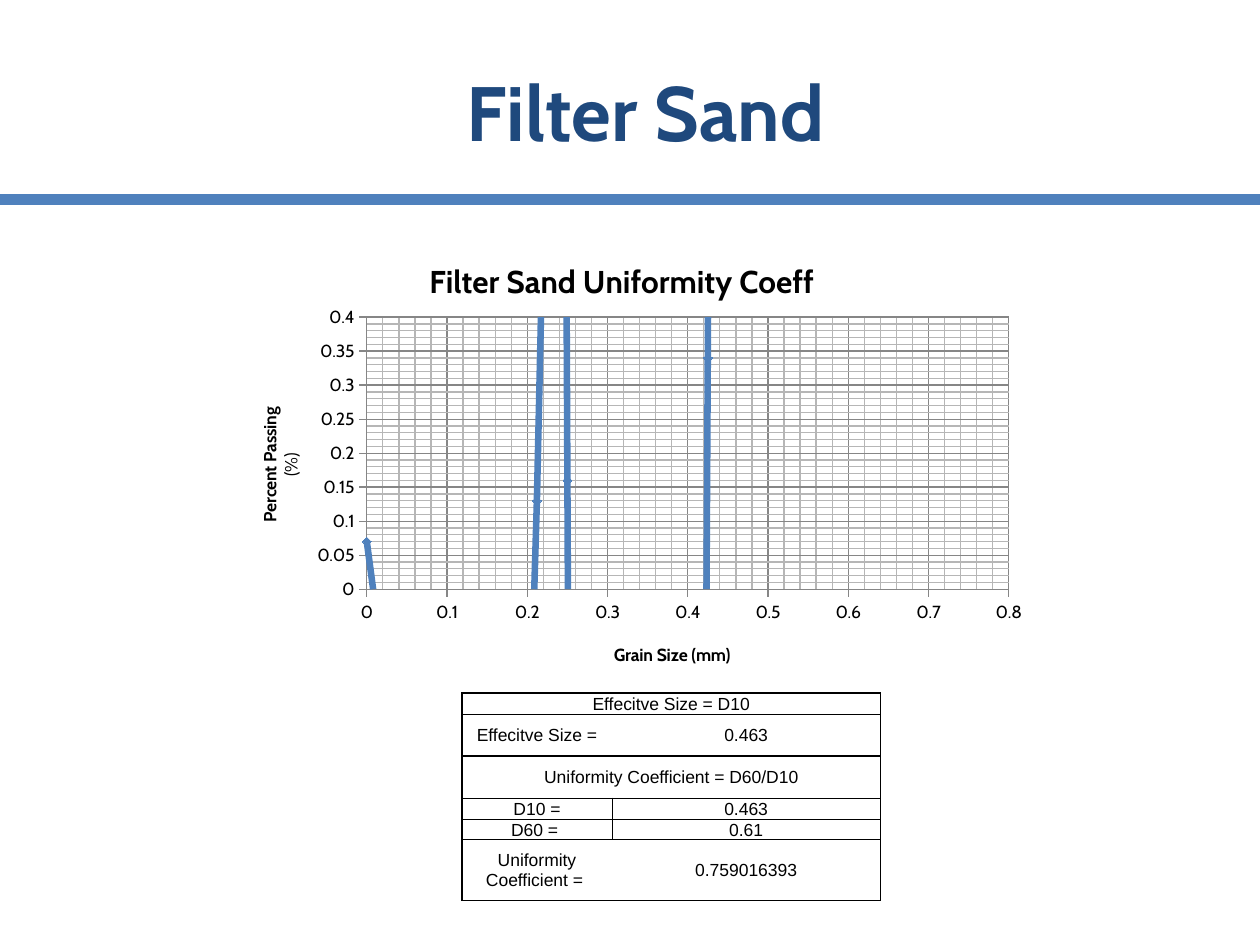
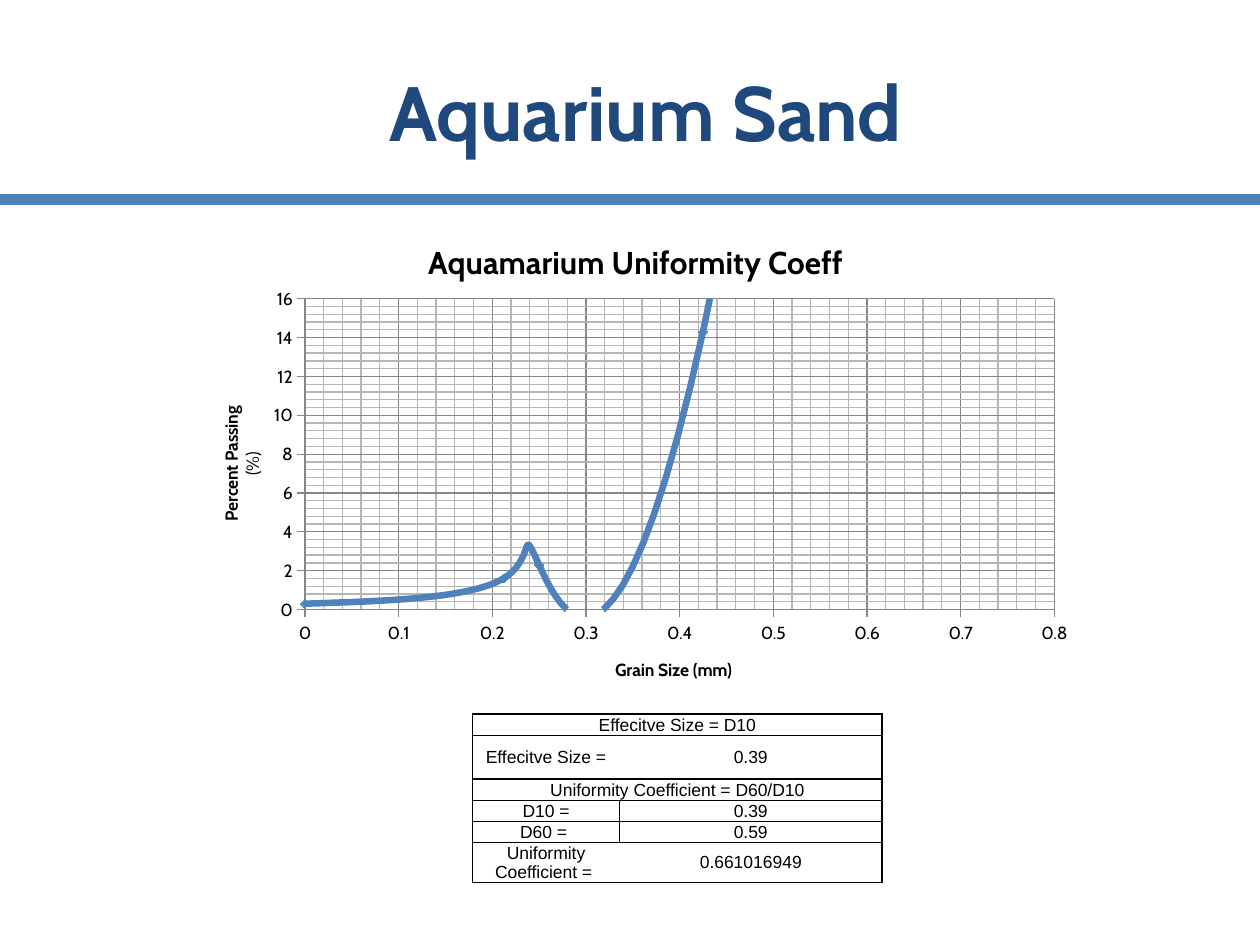
from dataclasses import dataclass
from lxml import etree
from pptx import Presentation
from pptx import util as u
from pptx.chart import data as chart_data
from pptx.dml import color
from pptx.enum import chart as charts, shapes, text
from pptx.oxml import ns


@dataclass(frozen=True)
class Theme:
    """Colours, fonts and type sizes shared by the slides."""
    navy: str = "1F497D"
    blue: str = "4F81BD"
    ink: str = "000000"
    grid: str = "868686"
    fine_grid: str = "B6B6B6"
    heading_font: str = "Cabin"
    table_font: str = "Arial"
    title_size: float = 44
    chart_title_size: float = 18
    body_size: float = 10


@dataclass(frozen=True)
class Box:
    """A region measured in grid columns and rows."""
    left: float
    top: float
    width: float
    height: float

    def place(self):
        """Return left, top, width and height as lengths."""
        return [cells(n) for n in (self.left, self.top, self.width, self.height)]


@dataclass(frozen=True)
class Sand:
    """The measurements and the regions of one sand slide."""
    title: str
    chart_title: str
    passing: tuple
    y_max: float
    y_step: float
    effective: str
    d60: str
    coefficient: str
    chart_box: Box
    plot_area: tuple
    title_spots: tuple
    table_box: Box
    label_width: float
    row_heights: tuple


THEME = Theme()
COLUMNS = 120
WIDTH, HEIGHT = u.Inches(10), u.Inches(7.5)
TITLE_BOX = Box(6, 3, 111, 15)
RULE_ROW = 19
SIEVES = (4.75, 2, 0.85, 0.425, 0.25, 0.212, 0)
SANDS = (
    Sand("Filter Sand", "Filter Sand Uniformity Coeff",
         (100, 100, 100, 0.34, 0.16, 0.13, 0.07), 0.4, 0.05,
         "0.463", "0.61", "0.759016393",
         Box(21, 22, 77.4, 43.2), (0.18, 0.19, 0.79, 0.6),
         ((0.25, 0.05), (0.48, 0.9), (0.04, 0.38)),
         Box(44, 66, 39.84, 19.75), 14.28, (2, 4, 4, 2, 2, 5.75)),
    Sand("Aquarium Sand", "Aquamarium Uniformity Coeff",
         (100, 100, 100, 14.3, 2.3, 1.6, 0.3), 16, 2,
         "0.39", "0.59", "0.661016949",
         Box(17, 20, 86, 47), (0.14, 0.18, 0.83, 0.63),
         ((0.27, 0.05), (0.48, 0.9), (0.04, 0.39)),
         Box(45, 68, 39, 14.4), 14, (2, 4.2, 2, 2, 2, 2.2)),
)


def cells(count):
    """Convert grid units to a length."""
    return u.Emu(round(count * WIDTH / COLUMNS))


def rgb(value):
    """Turn a hex string into a colour."""
    return color.RGBColor.from_string(value)


def style_font(font, size, name, ink, bold=False):
    """Apply size, face, colour and weight to a font."""
    font.size, font.name, font.bold = u.Pt(size), name, bold
    font.color.rgb = rgb(ink)


def style_line(line, ink, points):
    """Apply colour and width to a line."""
    line.color.rgb = rgb(ink)
    line.width = u.Pt(points)


def line_element(tag, ink, points):
    """Build a line in XML; zero points means no line."""
    line = etree.Element(ns.qn(tag), w=str(u.Pt(points)))
    if points:
        fill = etree.SubElement(line, ns.qn("a:solidFill"))
        etree.SubElement(fill, ns.qn("a:srgbClr"), val=ink)
    else:
        etree.SubElement(line, ns.qn("a:noFill"))
    return line


def write_run(paragraph, words, size, name, ink, bold=False):
    """Add one formatted run to a paragraph."""
    run = paragraph.add_run()
    run.text = words
    style_font(run.font, size, name, ink, bold)


def add_rule(slide, layout):
    """Draw the blue rule once, on the shared layout."""
    y = cells(RULE_ROW)
    rule = slide.shapes.add_connector(shapes.MSO_CONNECTOR.STRAIGHT, 0, y, WIDTH, y)
    style_line(rule.line, THEME.blue, 6)
    etree.SubElement(rule._element.spPr, ns.qn("a:effectLst"))
    layout.shapes._spTree.append(rule._element)


def add_title(slide, box, words):
    """Place and format the title placeholder."""
    title = slide.shapes.title
    title.left, title.top, title.width, title.height = box.place()
    title.text_frame.vertical_anchor = text.MSO_ANCHOR.MIDDLE
    paragraph = title.text_frame.paragraphs[0]
    paragraph.alignment = text.PP_ALIGN.CENTER
    write_run(paragraph, words, THEME.title_size, THEME.heading_font, THEME.navy, True)


def set_layout(element, shares, inner=False):
    """Fix a chart part at shares of the chart's size."""
    for old in element.findall(ns.qn("c:layout")):
        element.remove(old)
    layout = etree.Element(ns.qn("c:layout"))
    manual = etree.SubElement(layout, ns.qn("c:manualLayout"))
    settings = [("layoutTarget", "inner")] if inner else []
    settings += [("xMode", "edge"), ("yMode", "edge"), *zip("xywh", shares)]
    for tag, value in settings:
        etree.SubElement(manual, ns.qn(f"c:{tag}")).set("val", str(value))
    words = element.find(ns.qn("c:tx"))
    element.insert(0 if words is None else 1, layout)


def write_chart_title(title, lines, size, spot):
    """Write a chart or axis title, its first line bold."""
    frame = title.text_frame
    for index, words in enumerate(lines):
        paragraph = frame.add_paragraph() if index else frame.paragraphs[0]
        write_run(paragraph, words, size, THEME.heading_font, THEME.ink, index == 0)
    set_layout(title._element, spot)


def format_axis(axis, maximum, step):
    """Set the scale, ticks and both grids of an axis."""
    axis.minimum_scale, axis.maximum_scale = 0, maximum
    axis.major_unit, axis.minor_unit = step, round(step / 5, 2)
    axis.major_tick_mark = charts.XL_TICK_MARK.OUTSIDE
    axis.minor_tick_mark = charts.XL_TICK_MARK.NONE
    axis.has_major_gridlines = axis.has_minor_gridlines = True
    style_line(axis.major_gridlines.format.line, THEME.grid, 0.75)
    fine_grid = axis._element.find(ns.qn("c:minorGridlines"))
    properties = etree.SubElement(fine_grid, ns.qn("c:spPr"))
    properties.append(line_element("a:ln", THEME.fine_grid, 0.75))
    style_line(axis.format.line, THEME.grid, 0.75)
    axis.tick_labels.number_format = "General"
    axis.tick_labels.number_format_is_linked = False


def add_sieve_chart(slide, box, sand):
    """Plot percent passing against grain size."""
    data = chart_data.XyChartData()
    points = data.add_series("Series 1")
    for size, share in zip(SIEVES, sand.passing):
        points.add_data_point(size, share)
    chart = slide.shapes.add_chart(
        charts.XL_CHART_TYPE.XY_SCATTER_SMOOTH, *box.place(), data).chart
    style_font(chart.font, THEME.body_size, THEME.heading_font, THEME.ink)
    chart.has_legend = False
    format_axis(chart.category_axis, 0.8, 0.1)
    format_axis(chart.value_axis, sand.y_max, sand.y_step)
    title_spot, size_spot, passing_spot = sand.title_spots
    write_chart_title(chart.chart_title, [sand.chart_title],
                      THEME.chart_title_size, title_spot)
    write_chart_title(chart.category_axis.axis_title, ["Grain Size (mm)"],
                      THEME.body_size, size_spot)
    passing_title = chart.value_axis.axis_title
    write_chart_title(passing_title, ["Percent Passing", "(%)"],
                      THEME.body_size, passing_spot)
    body = passing_title._element.find(".//" + ns.qn("a:bodyPr"))
    body.set("rot", "-5400000")
    body.set("vert", "horz")
    set_layout(chart._chartSpace.find(".//" + ns.qn("c:plotArea")), sand.plot_area, True)
    plot = chart.plots[0]
    plot.vary_by_categories = False
    series = plot.series[0]
    series._element.get_or_add_smooth().val = True
    style_line(series.format.line, THEME.blue, 3.75)
    series.marker.style = charts.XL_MARKER_STYLE.DIAMOND
    series.marker.size = 5
    series.marker.format.fill.solid()
    series.marker.format.fill.fore_color.rgb = rgb(THEME.blue)
    style_line(series.marker.format.line, THEME.blue, 0.75)


def set_borders(cell, widths):
    """Draw left, right, top and bottom borders; zero means none."""
    properties = cell._tc.get_or_add_tcPr()
    for index, (side, points) in enumerate(zip("LRTB", widths)):
        properties.insert(index, line_element(f"a:ln{side}", THEME.ink, points))


def format_cell(cell, words):
    """Fill one table cell with centred text."""
    cell.fill.background()
    cell.vertical_anchor = text.MSO_ANCHOR.MIDDLE
    cell.margin_left = cell.margin_right = cell.margin_top = u.Inches(0.01)
    cell.margin_bottom = 0
    paragraph = cell.text_frame.paragraphs[0]
    paragraph.alignment = text.PP_ALIGN.CENTER
    paragraph.font.size = u.Pt(THEME.body_size)
    if words:
        write_run(paragraph, words, THEME.body_size, THEME.table_font, THEME.ink)


def add_size_table(slide, box, sand):
    """Tabulate effective size and uniformity coefficient."""
    rows = (
        ("Effecitve Size = D10", None),
        ("Effecitve Size =", sand.effective),
        ("Uniformity Coefficient = D60/D10", None),
        ("D10 =", sand.effective),
        ("D60 = ", sand.d60),
        ("Uniformity Coefficient = ", sand.coefficient),
    )
    table = slide.shapes.add_table(len(rows), 2, *box.place()).table
    table.first_row = table.horz_banding = False
    widths = (sand.label_width, box.width - sand.label_width)
    for column, width in zip(table.columns, widths):
        column.width = cells(width)
    section_edges = (0, 2, len(rows))
    for index, (row, height) in enumerate(zip(rows, sand.row_heights)):
        table.rows[index].height = cells(height)
        merged = row[1] is None
        divider = 1 if merged else 0.5 if row[0].startswith("D") else 0
        top, bottom = (1 if edge in section_edges else 0.5 for edge in (index, index + 1))
        for column, words in enumerate(row):
            cell = table.cell(index, column)
            format_cell(cell, words)
            sides = (divider, 1) if column else (1, divider)
            set_borders(cell, (*sides, top, bottom))
        if merged:
            table.cell(index, 0).merge(table.cell(index, 1))


def add_sand_slide(presentation, layout, sand):
    """Build one slide with its title, chart and table."""
    slide = presentation.slides.add_slide(layout)
    add_title(slide, TITLE_BOX, sand.title)
    add_sieve_chart(slide, sand.chart_box, sand)
    add_size_table(slide, sand.table_box, sand)
    return slide


def main():
    """Build and save the presentation."""
    presentation = Presentation()
    presentation.slide_width, presentation.slide_height = WIDTH, HEIGHT
    layout = presentation.slide_layouts[5]
    slides = [add_sand_slide(presentation, layout, sand) for sand in SANDS]
    add_rule(slides[0], layout)
    presentation.save("out.pptx")


if __name__ == "__main__":
    main()
